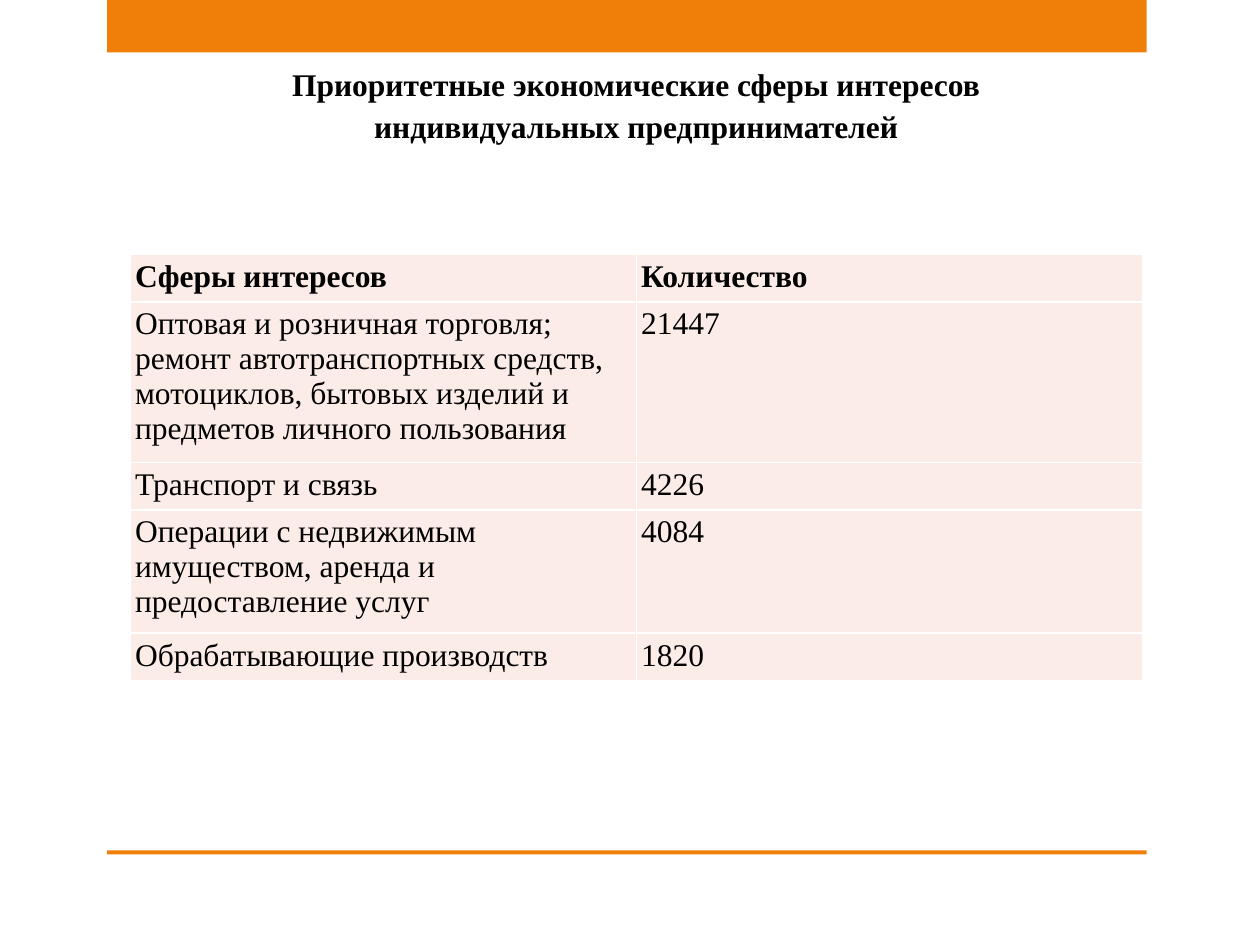
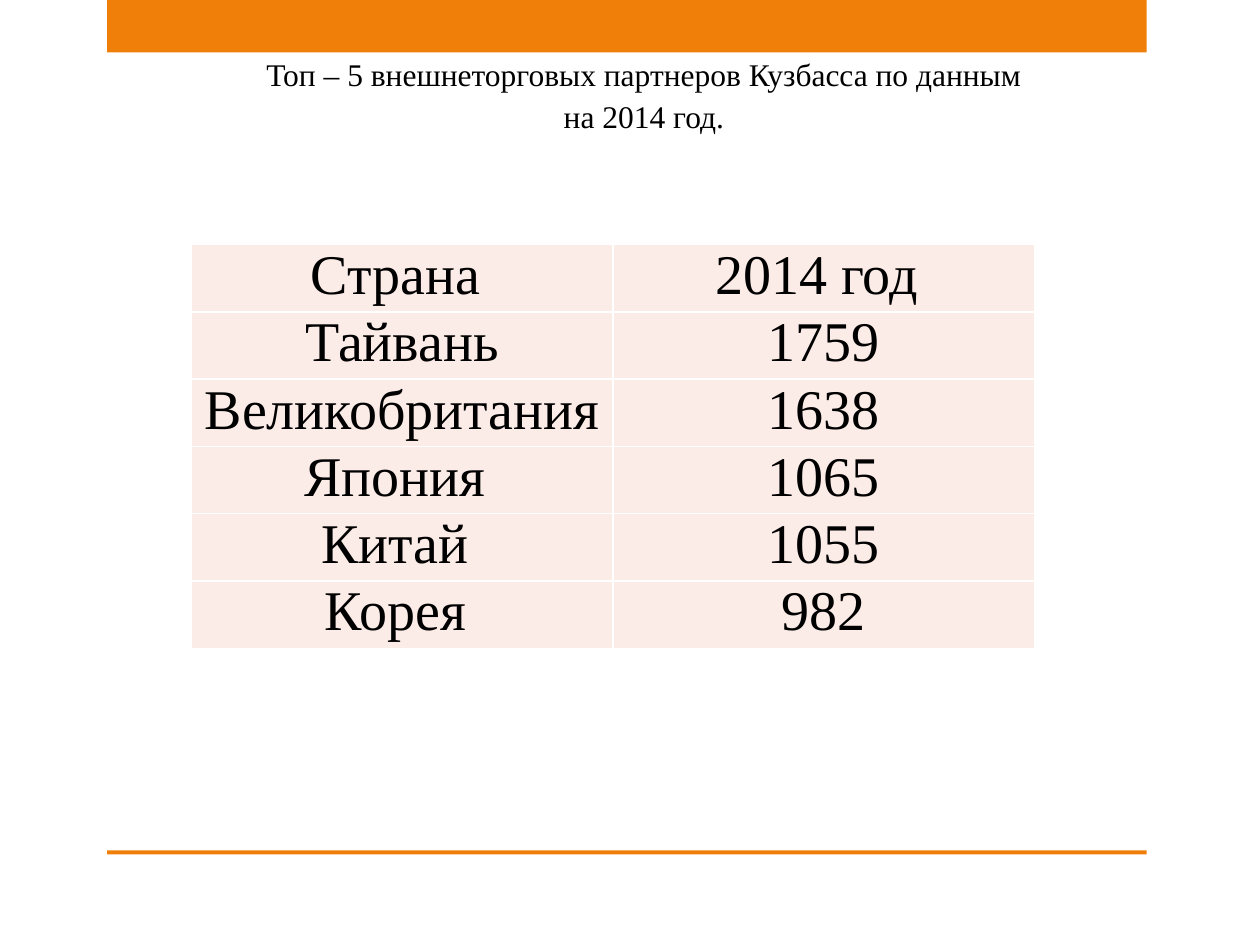
from lxml import etree
from pptx import Presentation
from pptx.dml.color import RGBColor
from pptx.enum.shapes import MSO_SHAPE
from pptx.enum.text import PP_ALIGN
from pptx.oxml.ns import qn
from pptx.util import Pt

RECTANGLE = MSO_SHAPE.RECTANGLE
LEFT, CENTER = PP_ALIGN.LEFT, PP_ALIGN.CENTER

FONT = "Times New Roman"
ORANGE = "F07F09"
PINK = "FCECE7"
WHITE = "FFFFFF"
BLACK = "000000"
BLANK_LAYOUT = 6

INTERESTS = [
    ("Сферы интересов", "Количество"),
    ("Оптовая и розничная торговля; ремонт автотранспортных средств, "
     "мотоциклов, бытовых изделий и предметов личного пользования", "21447"),
    ("Транспорт и связь", "4226"),
    ("Операции с недвижимым имуществом, аренда и предоставление услуг", "4084"),
    ("Обрабатывающие производств", "1820"),
]
PARTNERS = [
    ("Страна ", "2014 год "),
    ("Тайвань", "1759"),
    ("Великобритания ", "1638"),
    ("Япония ", "1065"),
    ("Китай ", "1055"),
    ("Корея ", "982"),
]


def paint(fill, color):
    fill.solid()
    fill.fore_color.rgb = RGBColor.from_string(color)


def write(frame, text, size, align, bold=False):
    """Put one styled paragraph into a text frame and return it."""
    frame.text = text
    paragraph = frame.paragraphs[0]
    paragraph.alignment = align
    font = paragraph.runs[0].font
    font.name, font.size, font.bold = FONT, Pt(size), bold
    font.color.rgb = RGBColor.from_string(BLACK)
    return paragraph


def add_band(slide, top, height):
    band = slide.shapes.add_shape(RECTANGLE, Pt(61.2), Pt(top), Pt(594), Pt(height))
    band.shadow.inherit = False
    paint(band.fill, ORANGE)
    band.line.fill.background()


def add_title(slide, text, left, top, width, bold=False):
    box = slide.shapes.add_textbox(Pt(left), Pt(top), Pt(width), Pt(51))
    box.text_frame.word_wrap = True
    write(box.text_frame, text, 18, CENTER, bold).line_spacing = 1.1


def add_framed_slide(deck):
    """Add a slide with the orange top band and bottom rule."""
    slide = deck.slides.add_slide(deck.slide_layouts[BLANK_LAYOUT])
    add_band(slide, 0, 30)
    add_band(slide, 486, 2.2)
    return slide


def outline_cell(cell):
    """Draw thin white borders; they must precede the cell fill."""
    properties = cell._tc.get_or_add_tcPr()
    for side in ("a:lnL", "a:lnR", "a:lnT", "a:lnB"):
        border = etree.SubElement(properties, qn(side), w=str(Pt(1)))
        solid = etree.SubElement(border, qn("a:solidFill"))
        etree.SubElement(solid, qn("a:srgbClr"), val=WHITE)


def add_data_table(slide, rows, left, top, width, heights, size, align,
                   side_margin, end_margin, bold_header=False):
    table = slide.shapes.add_table(len(rows), len(rows[0]), Pt(left), Pt(top),
                                   Pt(width), Pt(sum(heights))).table
    for column in table.columns:
        column.width = Pt(width / len(rows[0]))
    for r, (values, height) in enumerate(zip(rows, heights)):
        table.rows[r].height = Pt(height)
        for c, value in enumerate(values):
            cell = table.cell(r, c)
            outline_cell(cell)
            paint(cell.fill, PINK)
            cell.margin_left = cell.margin_right = Pt(side_margin)
            cell.margin_top = cell.margin_bottom = Pt(end_margin)
            write(cell.text_frame, value, size, align, bold_header and r == 0)


def main():
    deck = Presentation()
    deck.slide_width, deck.slide_height = Pt(720), Pt(540)

    interests = add_framed_slide(deck)
    add_title(interests, "Приоритетные экономические сферы интересов "
              "индивидуальных предпринимателей", 93.6, 31.7, 540, bold=True)
    add_data_table(interests, INTERESTS, 74.5, 145.5, 578.4,
                   [27, 91.8, 27, 70.5, 27], 18, LEFT, 2.7, 2.7,
                   bold_header=True)

    partners = add_framed_slide(deck)
    add_title(partners, "Топ – 5 внешнеторговых партнеров Кузбасса по данным "
              "на 2014 год.", 144, 26, 448)
    add_data_table(partners, PARTNERS, 109.5, 139.8, 481.6,
                   [38.4] * len(PARTNERS), 32, CENTER, 5, 0)

    deck.save("out.pptx")


if __name__ == "__main__":
    main()
